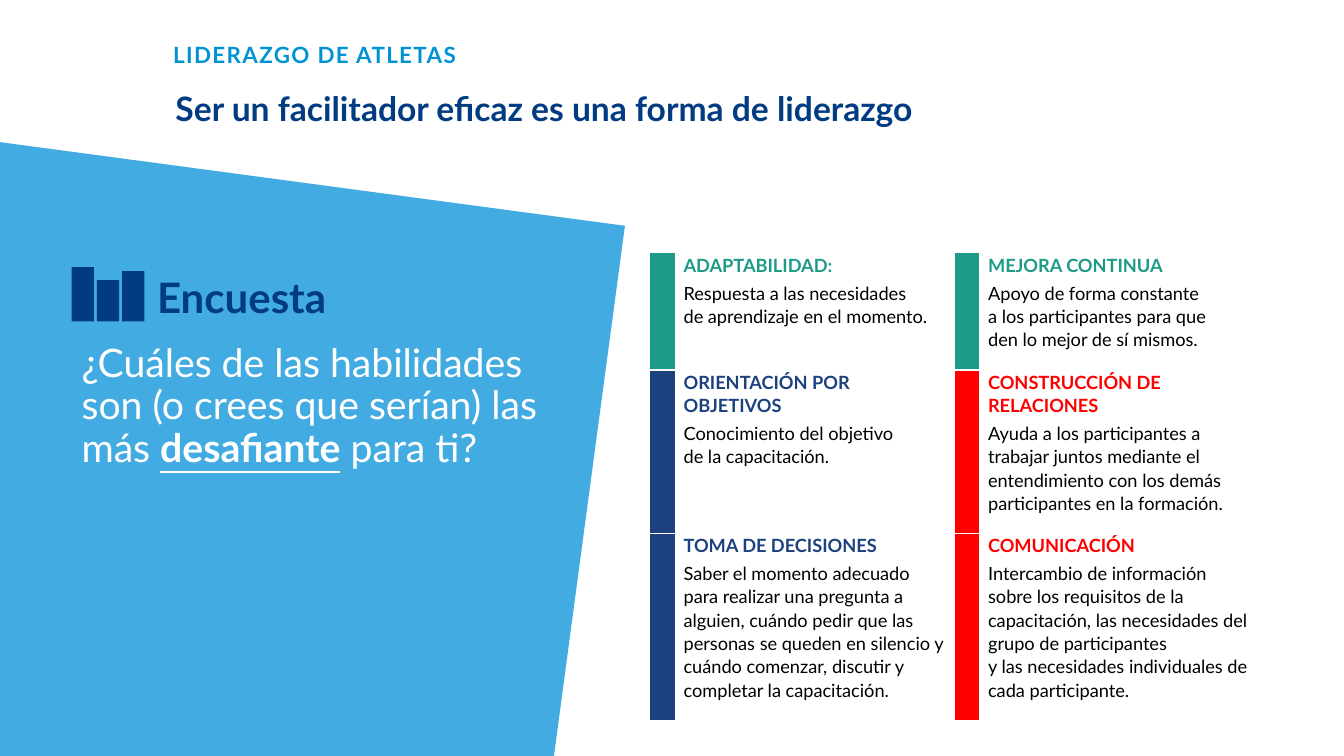
from lxml import etree
from pptx import Presentation, util as u
from pptx.dml.color import RGBColor
from pptx.enum import shapes, text
from pptx.oxml.ns import qn

WHITE = RGBColor(0xFF, 0xFF, 0xFF)
BLACK = RGBColor(0x00, 0x00, 0x00)
NAVY = RGBColor(0x01, 0x3B, 0x82)
CYAN = RGBColor(0x00, 0x93, 0xD4)
SKY = RGBColor(0x42, 0xAC, 0xE2)
GREEN = RGBColor(0x1C, 0x9B, 0x86)
INDIGO = RGBColor(0x1D, 0x41, 0x7F)
RED = RGBColor(0xFF, 0x00, 0x00)

NO_STYLE = "{2D5ABB26-0587-4C30-8999-92F81FD0307C}"

# Each row holds two skills: colour, name, description
SKILLS = [
    [(GREEN, "ADAPTABILIDAD:",
      "Respuesta a las necesidades\nde aprendizaje en el momento."),
     (GREEN, "MEJORA CONTINUA",
      "Apoyo de forma constante\na los participantes para que\nden lo mejor de sí mismos.")],
    [(INDIGO, "ORIENTACIÓN POR OBJETIVOS",
      "Conocimiento del objetivo\nde la capacitación."),
     (RED, "CONSTRUCCIÓN DE RELACIONES",
      "Ayuda a los participantes a trabajar juntos mediante el entendimiento "
      "con los demás participantes en la formación.")],
    [(INDIGO, "TOMA DE DECISIONES",
      "Saber el momento adecuado para realizar una pregunta a alguien, cuándo "
      "pedir que las personas se queden en silencio y cuándo comenzar, "
      "discutir y completar la capacitación."),
     (RED, "COMUNICACIÓN",
      "Intercambio de información sobre los requisitos de la capacitación, las "
      "necesidades del grupo de participantes\ny las necesidades individuales "
      "de cada participante.")],
]


class Deck:
    """Style and current slide; lengths are percentages of the slide size."""

    font = "Lato"

    def __init__(self):
        self.prs = Presentation()
        self.prs.slide_width = u.Inches(13.33)
        self.prs.slide_height = u.Inches(7.5)
        self.s = self.prs.slides.add_slide(self.prs.slide_layouts[5])

    def x(self, share):
        return u.Emu(round(self.prs.slide_width * share / 100))

    def y(self, share):
        return u.Emu(round(self.prs.slide_height * share / 100))

    def box(self, left, top, width, height):
        return self.x(left), self.y(top), self.x(width), self.y(height)

    def run(self, p, words, size, color, bold=False, underline=False):
        for i, line in enumerate(words.split("\n")):
            if i:
                p.add_line_break()
            r = p.add_run()
            r.text = line
            r.font.name = self.font
            r.font.size = u.Pt(size)
            r.font.bold = bold
            if underline:
                r.font.underline = True
            r.font.color.rgb = color
        return r

    def frame(self, sp, spacing):
        tf = sp.text_frame
        tf.word_wrap = True
        tf.auto_size = text.MSO_AUTO_SIZE.NONE
        tf.vertical_anchor = text.MSO_ANCHOR.TOP
        p = tf.paragraphs[0]
        p.alignment = text.PP_ALIGN.LEFT
        p.line_spacing = spacing
        p.space_before = u.Pt(0)
        return p

    def title(self, bounds, words, size, color):
        sp = self.s.shapes.title
        sp.left, sp.top, sp.width, sp.height = self.box(*bounds)
        self.run(self.frame(sp, 0.9), words, size, color, bold=True)

    def textbox(self, bounds, spacing=1.0):
        return self.frame(self.s.shapes.add_textbox(*self.box(*bounds)), spacing)

    def paint(self, sp, color):
        sp.shadow.inherit = False
        sp.fill.solid()
        sp.fill.fore_color.rgb = color
        sp.line.fill.background()

    def panel(self, corners, color):
        points = [(self.x(px), self.y(py)) for px, py in corners]
        fb = self.s.shapes.build_freeform(*points[0])
        fb.add_line_segments(points[1:], close=True)
        self.paint(fb.convert_to_shape(), color)

    def bars(self, left, bottom, width, step, heights, color):
        group = self.s.shapes.add_group_shape()
        for i, h in enumerate(heights):
            bounds = self.box(left + i * step, bottom - h, width, h)
            self.paint(group.shapes.add_shape(shapes.MSO_SHAPE.RECTANGLE, *bounds), color)

    def border(self, cell, side):
        ln = etree.SubElement(cell._tc.get_or_add_tcPr(), qn("a:" + side), w="12700")
        fill = etree.SubElement(ln, qn("a:solidFill"))
        etree.SubElement(fill, qn("a:srgbClr"), val=str(WHITE))

    def skill(self, cell, color, name, description):
        cell.fill.background()
        cell.margin_left = cell.margin_right = u.Inches(0.09)
        cell.margin_top, cell.margin_bottom = 0, u.Inches(0.19)
        tf = cell.text_frame
        p = tf.paragraphs[0]
        p.line_spacing, p.space_after = 1.07, u.Pt(3)
        self.run(p, name, 13, color, bold=True)
        p = tf.add_paragraph()
        p.line_spacing = 1.07
        self.run(p, description, 13, BLACK)

    def table(self, left, top, widths, heights, rows):
        bounds = self.box(left, top, sum(widths), sum(heights))
        frame = self.s.shapes.add_table(len(heights), len(widths), *bounds)
        tbl = frame.table
        tbl.first_row = tbl.horz_banding = False
        next(frame._element.iter(qn("a:tableStyleId"))).text = NO_STYLE
        for col, width in zip(tbl.columns, widths):
            col.width = self.x(width)
        for row, height in zip(tbl.rows, heights):
            row.height = self.y(height)
        for i, row in enumerate(rows):
            for j, (color, name, description) in enumerate(row):
                marker = tbl.cell(i, 2 * j)
                if i > 0:
                    self.border(marker, "lnT")
                if i < len(rows) - 1:
                    self.border(marker, "lnB")
                marker.fill.solid()
                marker.fill.fore_color.rgb = color
                self.skill(tbl.cell(i, 2 * j + 1), color, name, description)


def main():
    d = Deck()

    # Heading
    p = d.textbox((12.15, 4.8, 29.93, 8.53))
    r = d.run(p, "LIDERAZGO DE ATLETAS", 16, CYAN, bold=True)
    r.font._element.set("spc", "100")
    d.title((12.3, 11.6, 69.62, 6.8),
            "Ser un facilitador eficaz es una forma de liderazgo", 24, NAVY)

    # Survey panel
    d.panel([(0, 18.8), (46.5, 29.87), (41.22, 100), (0, 100)], SKY)
    d.bars(5.33, 42.53, 1.65, 1.88, [7.2, 5.47, 6.67], NAVY)
    p = d.textbox((10.95, 36.53, 17.63, 7.2), 0.8)
    d.run(p, "Encuesta", 30, NAVY, bold=True)
    p = d.textbox((5.33, 44.8, 36.68, 19.33), 0.9)
    d.run(p, "¿Cuáles de las habilidades son (o crees que serían) las más ", 28, WHITE)
    d.run(p, "desafiante", 28, WHITE, bold=True, underline=True)
    d.run(p, " para ti?", 28, WHITE)

    # Skills table
    d.table(48.39, 33.47, [1.8, 20.86] * 2, [15.47, 21.6, 24.67], SKILLS)

    d.prs.save("out.pptx")


if __name__ == "__main__":
    main()
